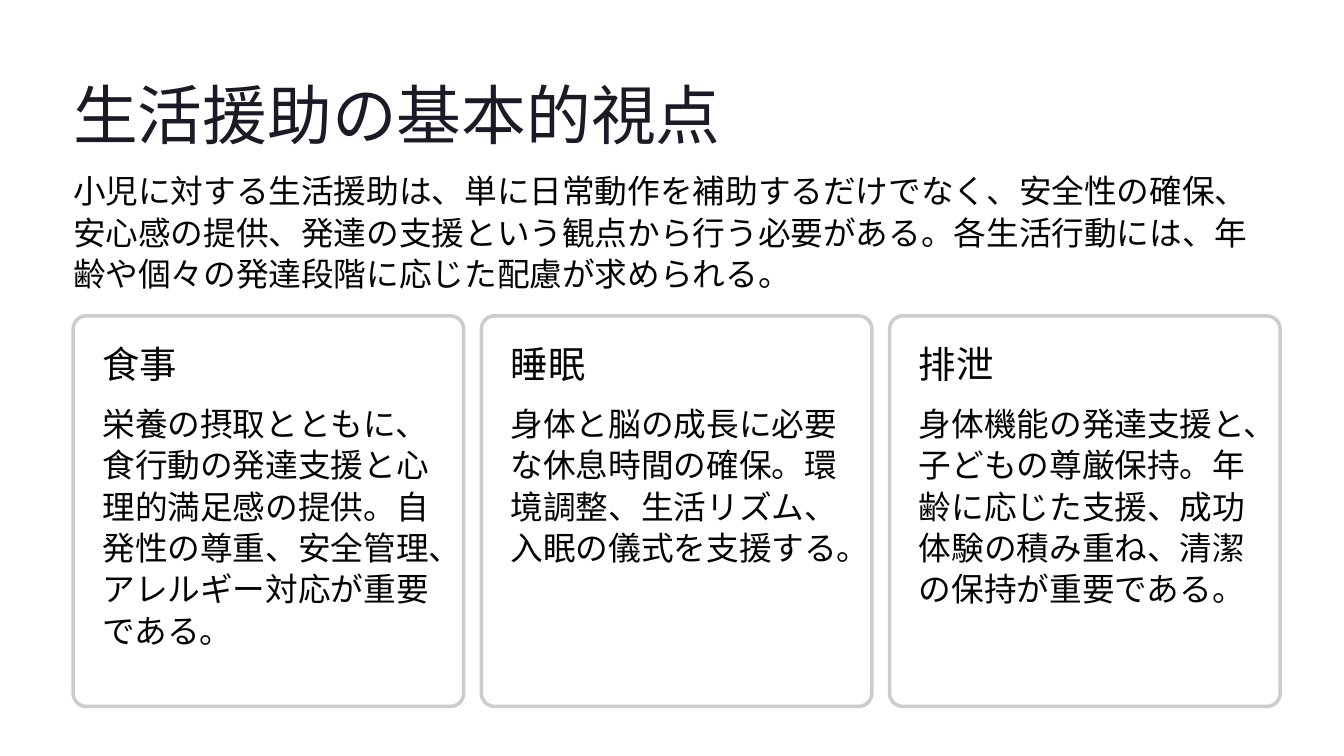
"""Build the slide on the basic viewpoints of daily life support."""
from dataclasses import dataclass

from pptx import Presentation
from pptx.dml.color import RGBColor
from pptx.enum.shapes import MSO_SHAPE
from pptx.enum.text import MSO_ANCHOR, PP_ALIGN
from pptx.oxml.ns import qn
from pptx.slide import Slide
from pptx.util import Inches, Pt
from lxml.etree import SubElement


@dataclass(frozen=True)
class Style:
    """Type style of one text role."""
    font: str
    size: float
    line: float
    color: str
    wrap: bool


@dataclass(frozen=True)
class Theme:
    """Colours and type sizes of the slide."""
    title: Style = Style("Inter", 55.5, 69.5, "1B1B27", False)
    head: Style = Style("Inter", 32, 34.5, "030303", False)
    body: Style = Style("Roboto", 28, 35.5, "030303", True)
    fill: str = "FFFFFF"
    alpha: int = 95
    edge: str = "CCCCCC"
    stroke: float = 3


@dataclass(frozen=True)
class Box:
    """Place of an element in inches."""
    left: float
    top: float
    width: float
    height: float


@dataclass(frozen=True)
class Card:
    """Heading, text and text height of one card."""
    head: str
    body: str
    height: float


THEME = Theme()
LEFT, TOP, SIDE, GAP, PAD = 0.87, 3.76, 4.65, 0.21, 0.35
INNER = 3.93
TITLE = "生活援助の基本的視点"
INTRO = (
    "小児に対する生活援助は、単に日常動作を補助するだけでなく、安全性の確保、"
    "安心感の提供、発達の支援という観点から行う必要がある。各生活行動には、"
    "年齢や個々の発達段階に応じた配慮が求められる。"
)
CARDS = (
    Card("食事", "栄養の摂取とともに、食行動の発達支援と心理的満足感の提供。"
         "自発性の尊重、安全管理、アレルギー対応が重要である。", 2.99),
    Card("睡眠", "身体と脳の成長に必要な休息時間の確保。"
         "環境調整、生活リズム、入眠の儀式を支援する。", 2.39),
    Card("排泄", "身体機能の発達支援と、子どもの尊厳保持。"
         "年齢に応じた支援、成功体験の積み重ね、清潔の保持が重要である。", 2.99),
)


def add_text(slide: Slide, box: Box, text: str, style: Style) -> None:
    """Add a text box without margins."""
    shape = slide.shapes.add_textbox(
        Inches(box.left), Inches(box.top), Inches(box.width), Inches(box.height))
    frame = shape.text_frame
    frame.margin_left = frame.margin_right = 0
    frame.margin_top = frame.margin_bottom = 0
    frame.vertical_anchor = MSO_ANCHOR.TOP
    frame.word_wrap = style.wrap
    frame.text = text
    para = frame.paragraphs[0]
    para.alignment = PP_ALIGN.LEFT
    para.line_spacing = Pt(style.line)
    font = para.runs[0].font
    font.name = style.font
    font.size = Pt(style.size)
    font.color.rgb = RGBColor.from_string(style.color)


def add_panel(slide: Slide, left: float) -> None:
    """Add the rounded panel of a card."""
    panel = slide.shapes.add_shape(
        MSO_SHAPE.ROUNDED_RECTANGLE,
        Inches(left), Inches(TOP), Inches(SIDE), Inches(SIDE))
    panel.adjustments[0] = 0.034
    panel.shadow.inherit = False
    panel.fill.solid()
    panel.fill.fore_color.rgb = RGBColor.from_string(THEME.fill)
    color = panel.fill._xPr.find(qn("a:solidFill"))[0]
    SubElement(color, qn("a:alpha")).set("val", str(THEME.alpha * 1000))
    panel.line.color.rgb = RGBColor.from_string(THEME.edge)
    panel.line.width = Pt(THEME.stroke)


def add_card(slide: Slide, left: float, card: Card) -> None:
    """Add a panel with its heading and text."""
    add_panel(slide, left)
    inset = left + PAD
    add_text(slide, Box(inset, TOP + PAD, INNER, 0.58), card.head, THEME.head)
    add_text(slide, Box(inset, 4.78, INNER, card.height), card.body, THEME.body)


def main() -> None:
    """Build and save the slide."""
    deck = Presentation()
    deck.slide_width, deck.slide_height = Inches(16), Inches(9)
    slide = deck.slides.add_slide(deck.slide_layouts[6])
    add_text(slide, Box(LEFT, 0.85, 7.76, 0.97), TITLE, THEME.title)
    add_text(slide, Box(LEFT, 2.01, 14.26, 1.49), INTRO, THEME.body)
    for col, card in enumerate(CARDS):
        add_card(slide, LEFT + col * (SIDE + GAP), card)
    deck.save("out.pptx")


if __name__ == "__main__":
    main()
